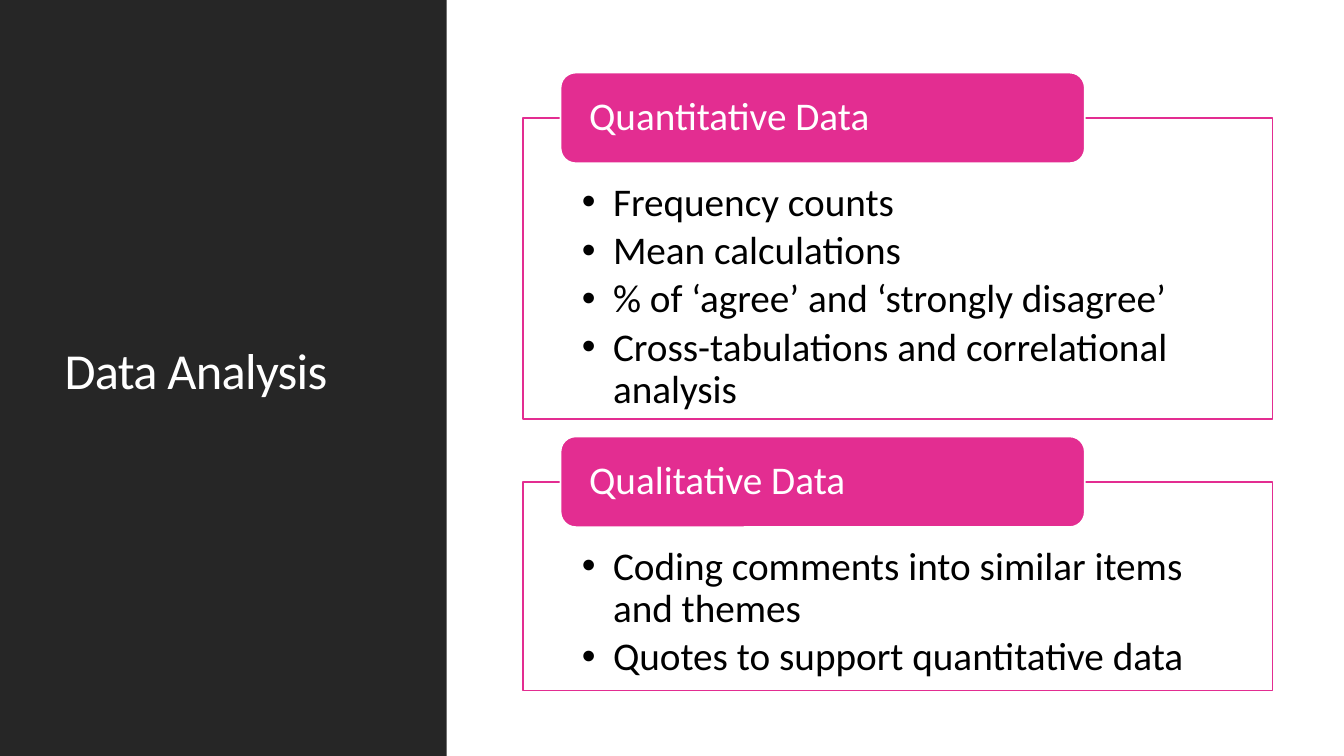
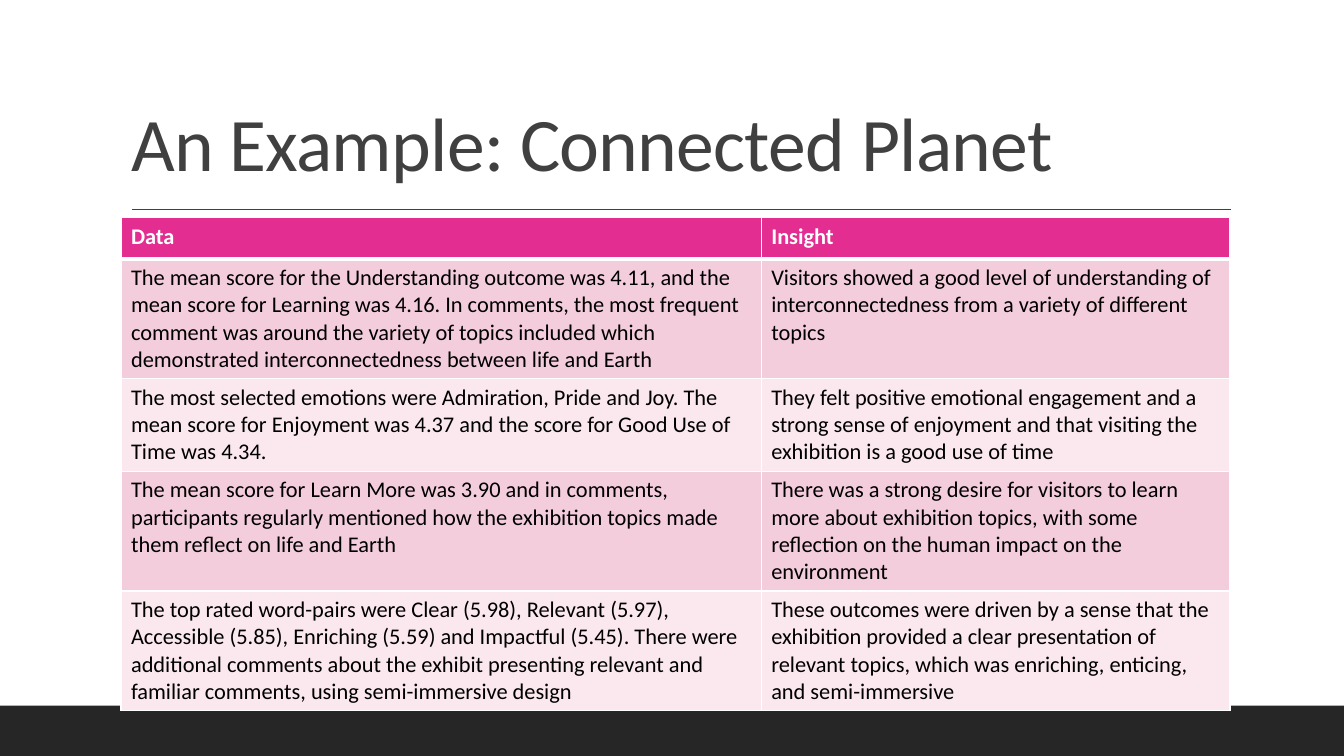
from dataclasses import dataclass

from lxml import etree
from pptx import Presentation
from pptx import util as u
from pptx.dml.color import RGBColor
from pptx.enum import shapes, text
from pptx.oxml.ns import qn


@dataclass(frozen=True)
class Theme:
    font: str = "Calibri"
    white: str = "FFFFFF"
    black: str = "000000"
    dark: str = "262626"
    title: str = "404040"
    accent: str = "E32D91"
    bands: tuple = ("F4CDDC", "FAE8EE")
    title_size: int = 54
    side_title_size: int = 36
    body_size: int = 28
    table_size: int = 16
    box_line: float = 1.25


TWO_CONTENT, TITLE_ONLY = 3, 5
WIDTH, HEIGHT = 13.33, 7.5


def rgb(color):
    return RGBColor.from_string(color)


class Deck:
    def __init__(self, theme):
        self.theme = theme
        self.prs = Presentation()
        self.prs.slide_width = u.Inches(WIDTH)
        self.prs.slide_height = u.Inches(HEIGHT)
        self.s = None

    def new_slide(self, layout):
        self.s = self.prs.slides.add_slide(self.prs.slide_layouts[layout])

    def place(self, sp, box):
        sp.left, sp.top, sp.width, sp.height = map(u.Inches, box)

    def paint(self, sp, fill, line=None):
        sp.fill.solid()
        sp.fill.fore_color.rgb = rgb(fill)
        if line:
            sp.line.color.rgb = rgb(line)
            sp.line.width = u.Pt(self.theme.box_line)
        else:
            sp.line.fill.background()

    def frame(self, sp, anchor, insets):
        tf = sp.text_frame
        tf.word_wrap = True
        tf.auto_size = text.MSO_AUTO_SIZE.NONE
        tf.vertical_anchor = anchor
        tf.margin_left, tf.margin_top, tf.margin_right, tf.margin_bottom = map(u.Inches, insets)
        return tf

    def run(self, p, words, size, color, bold=False):
        p.alignment = text.PP_ALIGN.LEFT
        r = p.add_run()
        r.text = words
        r.font.name = self.theme.font
        r.font.size = u.Pt(size)
        r.font.bold = bold
        r.font.color.rgb = rgb(color)
        return r

    def title(self, words, box, size, color, anchor):
        sp = self.s.shapes.title
        self.place(sp, box)
        p = self.frame(sp, anchor, (0.1, 0.05, 0.1, 0.05)).paragraphs[0]
        p.line_spacing = 0.8
        r = self.run(p, words, size, color)
        r._r.get_or_add_rPr().set("spc", "-50")

    def shape(self, kind, box, fill, line=None):
        sp = self.s.shapes.add_shape(kind, *map(u.Inches, box))
        sp.shadow.inherit = False
        self.paint(sp, fill, line)
        return sp

    def band(self, box):
        sp = self.shape(shapes.MSO_SHAPE.RECTANGLE, box, self.theme.dark)
        self.s.shapes.element.insert(2, sp.element)

    def rule(self, left, right, top):
        line = self.s.shapes.add_connector(
            shapes.MSO_CONNECTOR.STRAIGHT, *map(u.Inches, (left, top, right, top)))
        line.line.color.rgb = rgb(self.theme.title)
        line.line.width = u.Pt(1)
        etree.SubElement(line.element.spPr, qn("a:effectLst"))

    def bullet(self, p):
        pPr = p._p.get_or_add_pPr()
        pPr.set("marL", str(u.Inches(0.31)))
        pPr.set("indent", str(u.Inches(-0.31)))
        etree.SubElement(pPr, qn("a:buFont"), typeface="Arial")
        etree.SubElement(pPr, qn("a:buChar"), char="•")

    def list_box(self, idx, items, box):
        t = self.theme
        sp = self.s.placeholders[idx]
        self.place(sp, box)
        self.paint(sp, t.white, t.accent)
        tf = self.frame(sp, text.MSO_ANCHOR.TOP, (0.58, 0.64, 0.58, 0.22))
        for i, item in enumerate(items):
            p = tf.add_paragraph() if i else tf.paragraphs[0]
            p.line_spacing = 0.9
            p.space_before = u.Pt(0)
            p.space_after = u.Pt(0.15 * t.body_size)
            self.bullet(p)
            self.run(p, item, t.body_size, t.black)

    def label(self, words, box):
        t = self.theme
        sp = self.shape(shapes.MSO_SHAPE.ROUNDED_RECTANGLE, box, t.accent, t.white)
        p = self.frame(sp, text.MSO_ANCHOR.MIDDLE, (0.24, 0.04, 0.24, 0.04)).paragraphs[0]
        p.line_spacing = 0.9
        self.run(p, words, t.body_size, t.white)

    def borders(self, cell, widths):
        tcPr = cell._tc.get_or_add_tcPr()
        for side, width in widths.items():
            ln = etree.SubElement(tcPr, qn(f"a:ln{side}"), w=str(u.Pt(width)))
            fill = etree.SubElement(ln, qn("a:solidFill"))
            etree.SubElement(fill, qn("a:srgbClr"), val=self.theme.white)

    def table(self, rows, left, top, widths, heights):
        t = self.theme
        box = (left, top, sum(widths), sum(heights))
        tbl = self.s.shapes.add_table(len(rows), len(widths), *map(u.Inches, box)).table
        for col, width in zip(tbl.columns, widths):
            col.width = u.Inches(width)
        for i, (row, height) in enumerate(zip(rows, heights)):
            tbl.rows[i].height = u.Inches(height)
            header = i == 0
            top_line, bottom_line = (1, 3) if header else (3 if i == 1 else 1, 1)
            for j, words in enumerate(row):
                cell = tbl.cell(i, j)
                self.borders(cell, {"L": 1, "R": 1, "T": top_line, "B": bottom_line})
                cell.fill.solid()
                cell.fill.fore_color.rgb = rgb(t.accent if header else t.bands[(i - 1) % 2])
                self.run(cell.text_frame.paragraphs[0], words, t.table_size,
                         t.white if header else t.black, header)


GROUPS = [
    ("Quantitative Data", 1.17, 2.99, [
        "Frequency counts",
        "Mean calculations",
        "% of ‘agree’ and ‘strongly disagree’",
        "Cross-tabulations and correlational analysis",
    ]),
    ("Qualitative Data", 4.78, 2.07, [
        "Coding comments into similar items and themes",
        "Quotes to support quantitative data",
    ]),
]

FINDINGS = [
    ("Data", "Insight"),
    ("The mean score for the Understanding outcome was 4.11, and the mean score for Learning "
     "was 4.16. In comments, the most frequent comment was around the variety of topics included "
     "which demonstrated interconnectedness between life and Earth",
     "Visitors showed a good level of understanding of interconnectedness from a variety of "
     "different topics"),
    ("The most selected emotions were Admiration, Pride and Joy. The mean score for Enjoyment "
     "was 4.37 and the score for Good Use of Time was 4.34.",
     "They felt positive emotional engagement and a strong sense of enjoyment and that visiting "
     "the exhibition is a good use of time"),
    ("The mean score for Learn More was 3.90 and in comments, participants regularly mentioned "
     "how the exhibition topics made them reflect on life and Earth",
     "There was a strong desire for visitors to learn more about exhibition topics, with some "
     "reflection on the human impact on the environment"),
    ("The top rated word-pairs were Clear (5.98), Relevant (5.97), Accessible (5.85), Enriching "
     "(5.59) and Impactful (5.45). There were additional comments about the exhibit presenting "
     "relevant and familiar comments, using semi-immersive design",
     "These outcomes were driven by a sense that the exhibition provided a clear presentation of "
     "relevant topics, which was enriching, enticing, and semi-immersive"),
]


def analysis_slide(deck):
    t = deck.theme
    deck.new_slide(TWO_CONTENT)
    deck.band((0, 0, 4.43, HEIGHT))
    deck.title("Data Analysis", (0.54, 0.57, 3.37, 6.31), t.side_title_size, t.white,
               text.MSO_ANCHOR.MIDDLE)
    for idx, (heading, top, height, items) in enumerate(GROUPS, 1):
        deck.list_box(idx, items, (5.19, top, 7.43, height))
        deck.label(heading, (5.56, top - 0.45, 5.2, 0.9))


def example_slide(deck):
    t = deck.theme
    deck.new_slide(TITLE_ONLY)
    deck.band((0, 7, WIDTH, 0.5))
    deck.rule(1.31, 12.21, 2.08)
    deck.title("An Example: Connected Planet", (1.2, 0.31, 11, 1.59), t.title_size, t.title,
               text.MSO_ANCHOR.BOTTOM)
    deck.table(FINDINGS, 1.2, 2.16, (6.35, 4.65), (0.41, 1.18, 0.92, 1.18, 1.18))


def main():
    deck = Deck(Theme())
    analysis_slide(deck)
    example_slide(deck)
    deck.prs.save("out.pptx")


if __name__ == "__main__":
    main()
